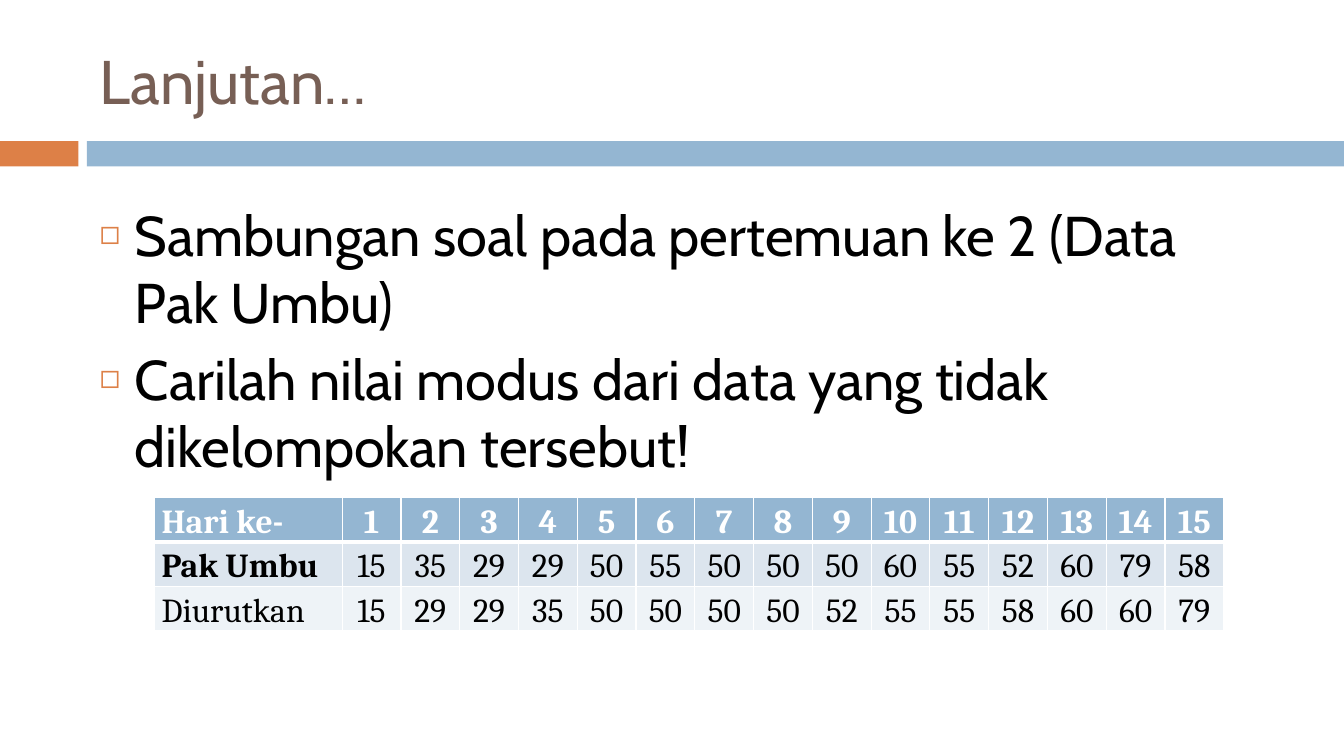
"""Build the slide about finding the mode of ungrouped data."""
import pptx
import pptx.dml.color
import pptx.enum.shapes
import pptx.enum.text
import pptx.oxml
import pptx.oxml.ns
import pptx.util
from dataclasses import dataclass

Pt = pptx.util.Pt
ALIGN = pptx.enum.text.PP_ALIGN
ANCHOR = pptx.enum.text.MSO_ANCHOR

HEADING = "Lanjutan…"
TASKS = [
    "Sambungan soal pada pertemuan ke 2 (Data Pak Umbu)",
    "Carilah nilai modus dari data yang tidak dikelompokan tersebut!",
]
PRICES = [15, 35, 29, 29, 50, 55, 50, 50, 50, 60, 55, 52, 60, 79, 58]
ROWS = [
    ["Hari ke-", *range(1, len(PRICES) + 1)],
    ["Pak Umbu", *PRICES],
    ["Diurutkan", *sorted(PRICES)],
]


@dataclass(frozen=True)
class Theme:
    """Colours, fonts and type sizes of the slide."""
    heading: str = "775F55"
    accent: str = "DD8047"
    blue: str = "94B6D2"
    white: str = "FFFFFF"
    black: str = "000000"
    row_fills: tuple = ("94B6D2", "DCE5EE", "EEF3F7")
    text_font: str = "Cabin"
    table_font: str = "Cambria"
    heading_size: int = 44
    task_size: int = 40
    table_size: int = 24


THEME = Theme()
SLIDE_WIDTH, SLIDE_HEIGHT = 960, 540
BAR_TOP, BAR_HEIGHT = 100.8, 18
BARS = [(0, 56, THEME.accent), (62, SLIDE_WIDTH - 62, THEME.blue)]
HEADING_BOX = (64, 18, 856, 78)
TASKS_BOX = (64, 139.5, 801.5, 221)
TABLE_LEFT, TABLE_TOP = 110.4, 355.2
LABEL_WIDTH, DAY_WIDTH, ROW_HEIGHT = 134, 42, 31.4
HANGING = 25.2
CELL_MARGIN = 5


def rgb(colour):
    """Return the colour object for a hex value."""
    return pptx.dml.color.RGBColor.from_string(colour)


def place(holder, box):
    """Move and size a placeholder."""
    holder.left, holder.top, holder.width, holder.height = map(Pt, box)
    holder.text_frame.auto_size = pptx.enum.text.MSO_AUTO_SIZE.NONE


def format_runs(paragraph, font, size, colour, bold=False):
    """Format every run of a paragraph."""
    for run in paragraph.runs:
        run.font.name = font
        run.font.size = Pt(size)
        run.font.bold = bold
        run.font.color.rgb = rgb(colour)


def element(xml):
    """Parse a drawing element given without its namespace."""
    tag, rest = xml[1:].split(" ", 1)
    return pptx.oxml.parse_xml(f"<{tag} {pptx.oxml.ns.nsdecls('a')} {rest}")


def add_bullet(paragraph):
    """Give a paragraph a small hollow square bullet."""
    properties = paragraph._p.get_or_add_pPr()
    properties.set("marL", str(Pt(HANGING)))
    properties.set("indent", str(-Pt(HANGING)))
    for xml in (f'<a:buClr ><a:srgbClr val="{THEME.accent}"/></a:buClr>',
                '<a:buSzPct val="60000"/>',
                '<a:buChar char="◻"/>'):
        properties.append(element(xml))


def add_borders(cell, top, bottom):
    """Draw white borders around a cell."""
    properties = cell._tc.get_or_add_tcPr()
    widths = {"lnL": 1, "lnR": 1, "lnT": top, "lnB": bottom}
    for index, (side, width) in enumerate(widths.items()):
        properties.insert(index, element(
            f'<a:{side} w="{Pt(width)}"><a:solidFill>'
            f'<a:srgbClr val="{THEME.white}"/></a:solidFill></a:{side}>'))


def add_bars(slide):
    """Add the two bars below the heading."""
    for left, width, colour in BARS:
        bar = slide.shapes.add_shape(
            pptx.enum.shapes.MSO_SHAPE.RECTANGLE,
            Pt(left), Pt(BAR_TOP), Pt(width), Pt(BAR_HEIGHT))
        bar.shadow.inherit = False
        bar.fill.solid()
        bar.fill.fore_color.rgb = rgb(colour)
        bar.line.fill.background()


def fill_placeholders(slide):
    """Write the heading and the list of tasks."""
    heading, tasks = slide.placeholders
    place(heading, HEADING_BOX)
    heading.text_frame.text = HEADING
    heading.text_frame.vertical_anchor = ANCHOR.MIDDLE
    paragraph = heading.text_frame.paragraphs[0]
    paragraph.alignment = ALIGN.LEFT
    format_runs(paragraph, THEME.text_font, THEME.heading_size, THEME.heading)

    place(tasks, TASKS_BOX)
    tasks.text_frame.text = "\n".join(TASKS)
    for paragraph in tasks.text_frame.paragraphs:
        paragraph.space_before = Pt(7)
        add_bullet(paragraph)
        format_runs(paragraph, THEME.text_font, THEME.task_size, THEME.black)


def format_cell(cell, value, row, column):
    """Write one table cell and format it by its place."""
    header, label = row == 0, column == 0
    cell.fill.solid()
    cell.fill.fore_color.rgb = rgb(THEME.row_fills[row])
    add_borders(cell, 3 if row == 1 else 1, 3 if header else 1)
    cell.margin_left = cell.margin_right = Pt(CELL_MARGIN)
    cell.margin_top = cell.margin_bottom = Pt(0)
    cell.vertical_anchor = ANCHOR.TOP if header else ANCHOR.MIDDLE
    cell.text_frame.text = str(value)
    paragraph = cell.text_frame.paragraphs[0]
    paragraph.line_spacing = 1.15
    label_alignment = ALIGN.JUSTIFY if header else ALIGN.LEFT
    paragraph.alignment = label_alignment if label else ALIGN.CENTER
    format_runs(paragraph, THEME.table_font, THEME.table_size,
                THEME.white if header else THEME.black,
                bold=header or (label and row == 1))


def add_data(slide):
    """Add the table of daily and sorted values."""
    widths = [LABEL_WIDTH] + [DAY_WIDTH] * len(PRICES)
    data = slide.shapes.add_table(
        len(ROWS), len(widths), Pt(TABLE_LEFT), Pt(TABLE_TOP),
        Pt(sum(widths)), Pt(ROW_HEIGHT * len(ROWS))).table
    data.first_row = data.horz_banding = False
    for column, width in zip(data.columns, widths):
        column.width = Pt(width)
    for row, values in enumerate(ROWS):
        data.rows[row].height = Pt(ROW_HEIGHT)
        for column, value in enumerate(values):
            format_cell(data.cell(row, column), value, row, column)


def main():
    """Build and save the presentation."""
    deck = pptx.Presentation()
    deck.slide_width, deck.slide_height = Pt(SLIDE_WIDTH), Pt(SLIDE_HEIGHT)
    slide = deck.slides.add_slide(deck.slide_layouts[1])
    add_bars(slide)
    fill_placeholders(slide)
    add_data(slide)
    deck.save("out.pptx")


if __name__ == "__main__":
    main()
